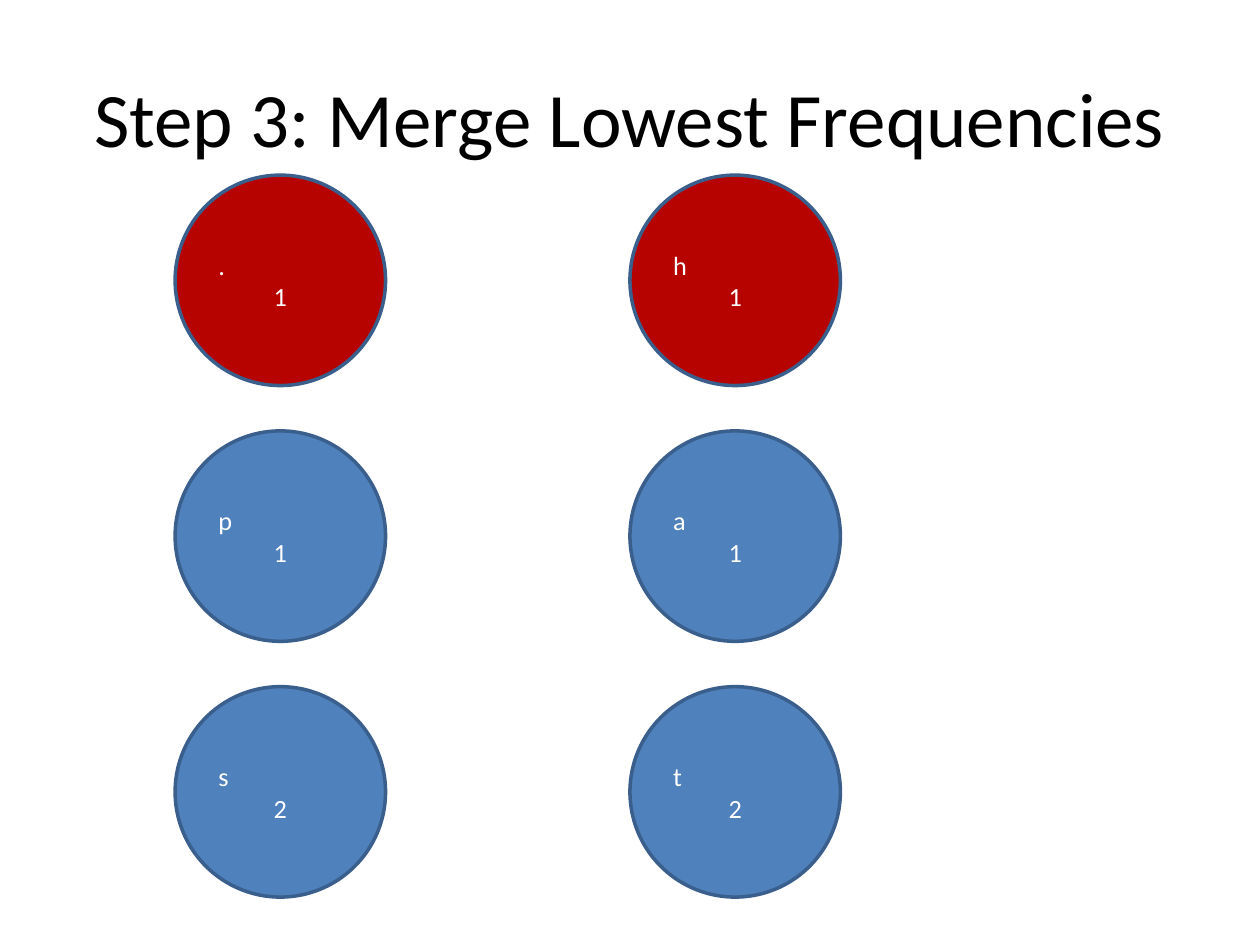
"""Build the slide on merging the lowest symbol frequencies."""
from dataclasses import dataclass

from pptx import Presentation
from pptx.dml.color import RGBColor
from pptx.enum.shapes import MSO_SHAPE
from pptx.enum.text import MSO_ANCHOR, PP_ALIGN
from pptx.util import Inches, Pt

RED = "B60300"
BLUE = "4F81BD"
OUTLINE = "3A5F8C"
WHITE = "FFFFFF"
BLACK = "000000"
LEFT, TOP = 1.39, 1.39
DIAMETER = 1.67
COLUMN_STEP, ROW_STEP = 3.61, 2.03
COLUMNS = 2


@dataclass
class Node:
    symbol: str
    frequency: int
    fill: str = BLUE


NODES = [
    Node(".", 1, RED), Node("h", 1, RED),
    Node("p", 1), Node("a", 1),
    Node("s", 2), Node("t", 2),
]


def color(value: str) -> RGBColor:
    return RGBColor.from_string(value)


def add_text(paragraph, text: str, size: float, text_color: str, alignment) -> None:
    paragraph.alignment = alignment
    run = paragraph.add_run()
    run.text = text
    run.font.name = "Calibri"
    run.font.size = Pt(size)
    run.font.color.rgb = color(text_color)


def add_title(slide, text: str) -> None:
    title = slide.shapes.title
    title.left, title.top = Inches(0.5), Inches(0.3)
    title.width, title.height = Inches(9), Inches(1.25)
    title.text_frame.vertical_anchor = MSO_ANCHOR.MIDDLE
    add_text(title.text_frame.paragraphs[0], text, 44, BLACK, PP_ALIGN.CENTER)


def add_node(slide, node: Node, row: int, column: int) -> None:
    circle = slide.shapes.add_shape(
        MSO_SHAPE.OVAL,
        Inches(LEFT + column * COLUMN_STEP), Inches(TOP + row * ROW_STEP),
        Inches(DIAMETER), Inches(DIAMETER),
    )
    circle.shadow.inherit = False
    circle.fill.solid()
    circle.fill.fore_color.rgb = color(node.fill)
    circle.line.color.rgb = color(OUTLINE)
    circle.line.width = Pt(2)
    frame = circle.text_frame
    frame.word_wrap = True
    frame.vertical_anchor = MSO_ANCHOR.MIDDLE
    add_text(frame.paragraphs[0], node.symbol, 15, WHITE, PP_ALIGN.LEFT)
    add_text(frame.add_paragraph(), str(node.frequency), 15, WHITE, PP_ALIGN.CENTER)


def main() -> None:
    presentation = Presentation()
    presentation.slide_width, presentation.slide_height = Inches(10), Inches(7.5)
    slide = presentation.slides.add_slide(presentation.slide_layouts[5])
    add_title(slide, "Step 3: Merge Lowest Frequencies")
    for index, node in enumerate(NODES):
        add_node(slide, node, *divmod(index, COLUMNS))
    presentation.save("out.pptx")


if __name__ == "__main__":
    main()
